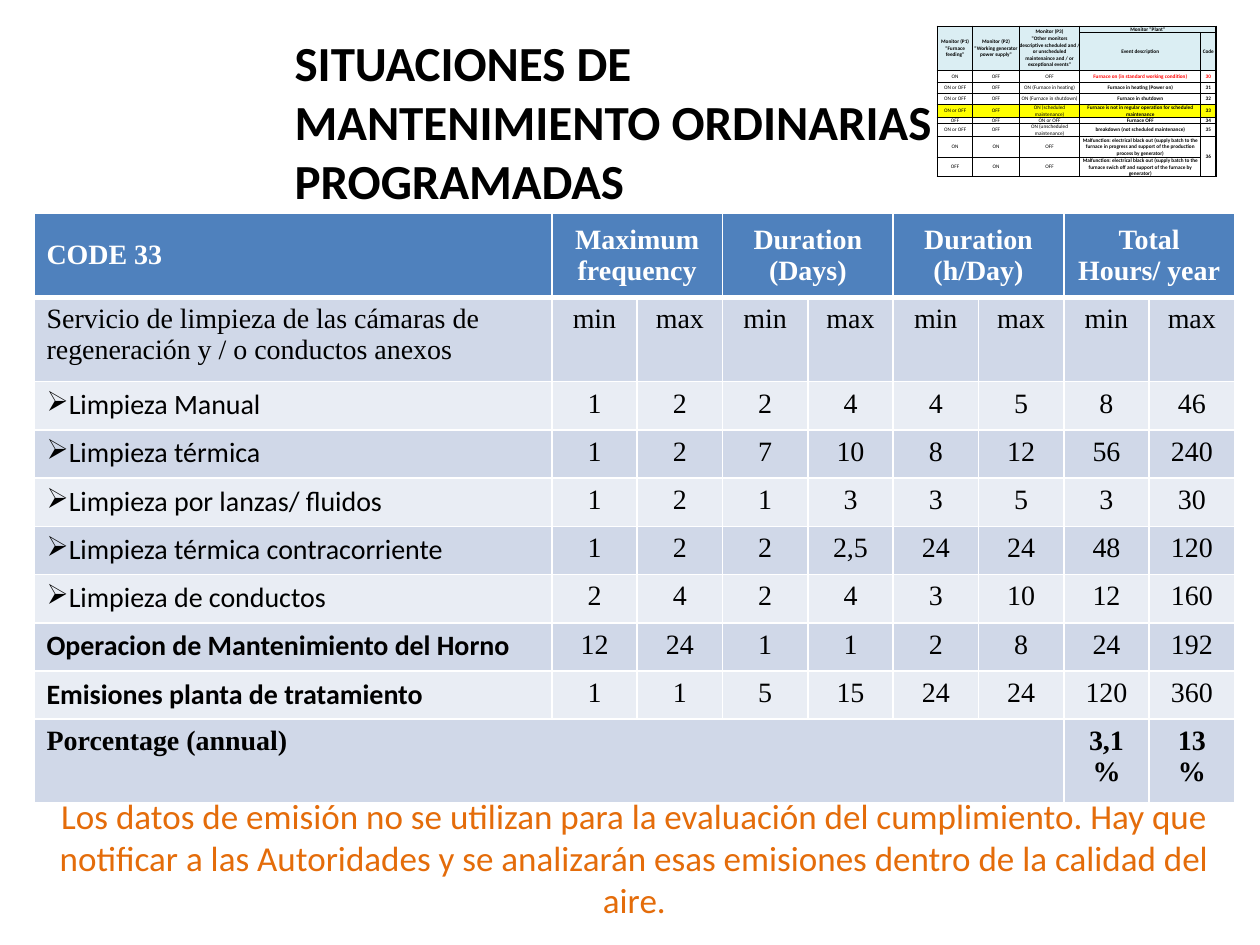
from dataclasses import dataclass, replace

from lxml import etree
from pptx import Presentation
from pptx.dml.color import RGBColor
from pptx.enum.text import MSO_ANCHOR as Anchor, PP_ALIGN as Align
from pptx.oxml.ns import qn
from pptx.util import Inches, Pt

SERIF, SANS = "Times New Roman", "Calibri"
BLACK, WHITE, RED, ORANGE = "000000", "FFFFFF", "FF0000", "E46C0A"
HEADER_BLUE, BAND_DARK, BAND_LIGHT = "4F81BD", "D0D8E8", "E9EDF4"
PALE_BLUE, YELLOW = "DBEEF3", "FFFF00"


@dataclass(frozen=True)
class CellStyle:
    size: float
    font: str
    color: str = BLACK
    bold: bool = False
    align: Align = Align.CENTER
    anchor: Anchor = Anchor.TOP
    fill: str | None = None
    hanging: bool = False
    bullet: str | None = None


@dataclass(frozen=True)
class Borders:
    color: str
    inner: float
    outer: float
    below_header: float
    header_rows: int

    def width(self, line: int, line_count: int, is_row: bool) -> float:
        """Width of the grid line with this index, counted from the top or left."""
        if is_row and line == self.header_rows:
            return self.below_header
        return self.outer if line in (0, line_count) else self.inner


def rgb(hex_color: str) -> RGBColor:
    return RGBColor.from_string(hex_color)


def write(frame, text: str, *, size: float, font: str, color: str = BLACK,
          bold: bool = False, align: Align = Align.LEFT,
          hanging: bool = False, bullet: str | None = None) -> None:
    frame.word_wrap = True
    paragraph = frame.paragraphs[0]
    paragraph.text = text
    paragraph.alignment = align
    if hanging:
        properties = paragraph._p.get_or_add_pPr()
        properties.set("marL", str(Inches(0.08)))
        properties.set("indent", str(Inches(-0.31)))
        if bullet:
            etree.SubElement(properties, qn("a:buChar")).set("char", bullet)
    for run in paragraph.runs:
        run.font.size = Pt(size)
        run.font.name = font
        run.font.bold = bold
        run.font.color.rgb = rgb(color)


def draw_border(cell, side: str, color: str, width: float) -> None:
    line = etree.SubElement(cell._tc.get_or_add_tcPr(), qn(f"a:ln{side}"), w=str(Pt(width)))
    fill = etree.SubElement(line, qn("a:solidFill"))
    etree.SubElement(fill, qn("a:srgbClr"), val=color)


def fill_cell(cell, text: str, style: CellStyle) -> None:
    if style.fill:
        cell.fill.solid()
        cell.fill.fore_color.rgb = rgb(style.fill)
    else:
        cell.fill.background()
    cell.vertical_anchor = style.anchor
    write(cell.text_frame, text, size=style.size, font=style.font, color=style.color,
          bold=style.bold, align=style.align, hanging=style.hanging, bullet=style.bullet)


def draw_table(slide, left: float, top: float, widths: list[float], heights: list[float],
               rows: list, merges: list, borders: Borders, style_of,
               margin: float | None = None) -> None:
    """Draw rows of text; a merge is (first row, first column, last row, last column)."""
    table = slide.shapes.add_table(
        len(heights), len(widths), Inches(left), Inches(top),
        Inches(sum(widths)), Inches(sum(heights))).table
    table.horz_banding = False
    for column, width in zip(table.columns, widths):
        column.width = Inches(width)
    for row, height in zip(table.rows, heights):
        row.height = Inches(height)
    for r1, c1, r2, c2 in merges:
        table.cell(r1, c1).merge(table.cell(r2, c2))
    for r, texts in enumerate(rows):
        for c, text in enumerate(texts):
            cell = table.cell(r, c)
            if margin is not None:
                cell.margin_left = cell.margin_right = Inches(margin)
                cell.margin_top = cell.margin_bottom = Inches(margin)
            if cell.is_spanned:
                continue
            bottom = r + (cell.span_height if cell.is_merge_origin else 1)
            right = c + (cell.span_width if cell.is_merge_origin else 1)
            for side, line, count, is_row in (
                    ("L", c, len(widths), False), ("R", right, len(widths), False),
                    ("T", r, len(heights), True), ("B", bottom, len(heights), True)):
                draw_border(cell, side, borders.color, borders.width(line, count, is_row))
            fill_cell(cell, text, style_of(r, c))


MAINTENANCE = [
    ["CODE 33", "Maximum frequency", "", "Duration (Days)", "", "Duration (h/Day)", "",
     "Total Hours/ year", ""],
    ["Servicio de limpieza de las cámaras de regeneración y / o conductos anexos",
     *["min", "max"] * 4],
    ["Limpieza Manual", "1", "2", "2", "4", "4", "5", "8", "46"],
    ["Limpieza térmica", "1", "2", "7", "10", "8", "12", "56", "240"],
    ["Limpieza por lanzas/ fluidos", "1", "2", "1", "3", "3", "5", "3", "30"],
    ["Limpieza térmica contracorriente", "1", "2", "2", "2,5", "24", "24", "48", "120"],
    ["Limpieza de conductos", "2", "4", "2", "4", "3", "10", "12", "160"],
    ["Operacion de Mantenimiento del Horno", "12", "24", "1", "1", "2", "8", "24", "192"],
    ["Emisiones planta de tratamiento", "1", "1", "5", "15", "24", "24", "120", "360"],
    ["Porcentage (annual)", *[""] * 6, "3,1%", "13 %"],
]
CLEANING_ROWS, OPERATION_ROWS, PERCENT_ROW = range(2, 7), range(7, 9), 9

MONITORS = [
    ['Monitor (P1)\n"Furnace feeding"', 'Monitor (P2)\n"Working generator power supply"',
     'Monitor (P3)\n"Other monitors descriptive scheduled and / or unscheduled '
     'maintenaince and / or exceptional events"', 'Monitor "Plant"', ""],
    ["", "", "", "Event description", "Code"],
    ["ON", "OFF", "OFF", "Furnace on (in standard working condition)", "30"],
    ["ON or OFF", "OFF", "ON (Furnace in heating)", "Furnace in heating (Power on)", "31"],
    ["ON or OFF", "OFF", "ON (Furnace in shutdown)", "Furnace in shutdown", "32"],
    ["ON or OFF", "OFF", "ON (scheduled maintenance)",
     "Furnace is not in regular operation for scheduled maintenance", "33"],
    ["OFF", "OFF", "ON or OFF", "Furnace OFF", "34"],
    ["ON or OFF", "OFF", "ON (unscheduled maintenance)",
     "breakdown (not scheduled maintenance)", "35"],
    ["ON", "ON", "OFF", "Malfunction: electrical black out (supply batch to the furnace in "
     "progress and support of the production process by generator)", "36"],
    ["OFF", "ON", "OFF", "Malfunction: electrical black out (supply batch to the furnace "
     "swich off and support of the furnace by generator)", ""],
]
STANDARD_ROW, SCHEDULED_ROW = 2, 5


def maintenance_style(row: int, column: int) -> CellStyle:
    style = CellStyle(16, SERIF, align=Align.CENTER if column else Align.LEFT,
                      fill=BAND_DARK if row % 2 else BAND_LIGHT)
    if row == 0:
        return replace(style, color=WHITE, bold=True, anchor=Anchor.MIDDLE, fill=HEADER_BLUE)
    if row == PERCENT_ROW:
        return replace(style, bold=True, fill=BAND_DARK)
    if column == 0 and row in CLEANING_ROWS:
        return replace(style, font=SANS, hanging=True, bullet="➢")
    if column == 0 and row in OPERATION_ROWS:
        return replace(style, font=SANS, hanging=True, bold=True)
    return style


def monitor_style(row: int, column: int) -> CellStyle:
    is_header, is_event = row < 2, column >= 3
    fill = PALE_BLUE if is_header else YELLOW if row == SCHEDULED_ROW else None
    return CellStyle(3, SANS, color=RED if row == STANDARD_ROW and is_event else BLACK,
                     bold=is_header or is_event, anchor=Anchor.MIDDLE, fill=fill)


def add_text(slide, left: float, top: float, width: float, height: float,
             text: str, **text_format) -> None:
    box = slide.shapes.add_textbox(Inches(left), Inches(top), Inches(width), Inches(height))
    write(box.text_frame, text, font=SANS, **text_format)


def main() -> None:
    deck = Presentation()
    deck.slide_width, deck.slide_height = Inches(10), Inches(7.5)
    slide = deck.slides.add_slide(deck.slide_layouts[6])

    cleaning_height = (4.68 - 2 * 0.67 - 0.66) / 7
    draw_table(slide, 0.27, 1.69, [4.11] + [(9.53 - 4.11) / 8] * 8,
               [0.67] * 2 + [cleaning_height] * 7 + [0.66], MAINTENANCE,
               [(0, c, 0, c + 1) for c in range(1, 9, 2)] + [(PERCENT_ROW, 0, PERCENT_ROW, 6)],
               Borders(WHITE, inner=1, outer=1, below_header=3, header_rows=1),
               maintenance_style)
    add_text(slide, 2.24, 0.21, 5.83, 1.18,
             "SITUACIONES DE MANTENIMIENTO ORDINARIAS PROGRAMADAS", size=28, bold=True)
    draw_table(slide, 7.44, 0.21, [0.28, 0.37, 0.48, 0.96, 0.12],
               [0.05, 0.3, 0.09, 0.09, 0.09, 0.1, 0.05, 0.1, 0.17, 0.15], MONITORS,
               [(0, c, 1, c) for c in range(3)] + [(0, 3, 0, 4), (8, 4, 9, 4)],
               Borders(BLACK, inner=0.5, outer=1, below_header=1, header_rows=2),
               monitor_style, margin=0)
    add_text(slide, 0.27, 6.26, 9.53, 1.11,
             "Los datos de emisión no se utilizan para la evaluación del cumplimiento. "
             "Hay que notificar a las Autoridades y se analizarán esas emisiones dentro "
             "de la calidad del aire.", size=20, color=ORANGE, align=Align.CENTER)
    deck.save("out.pptx")


if __name__ == "__main__":
    main()
